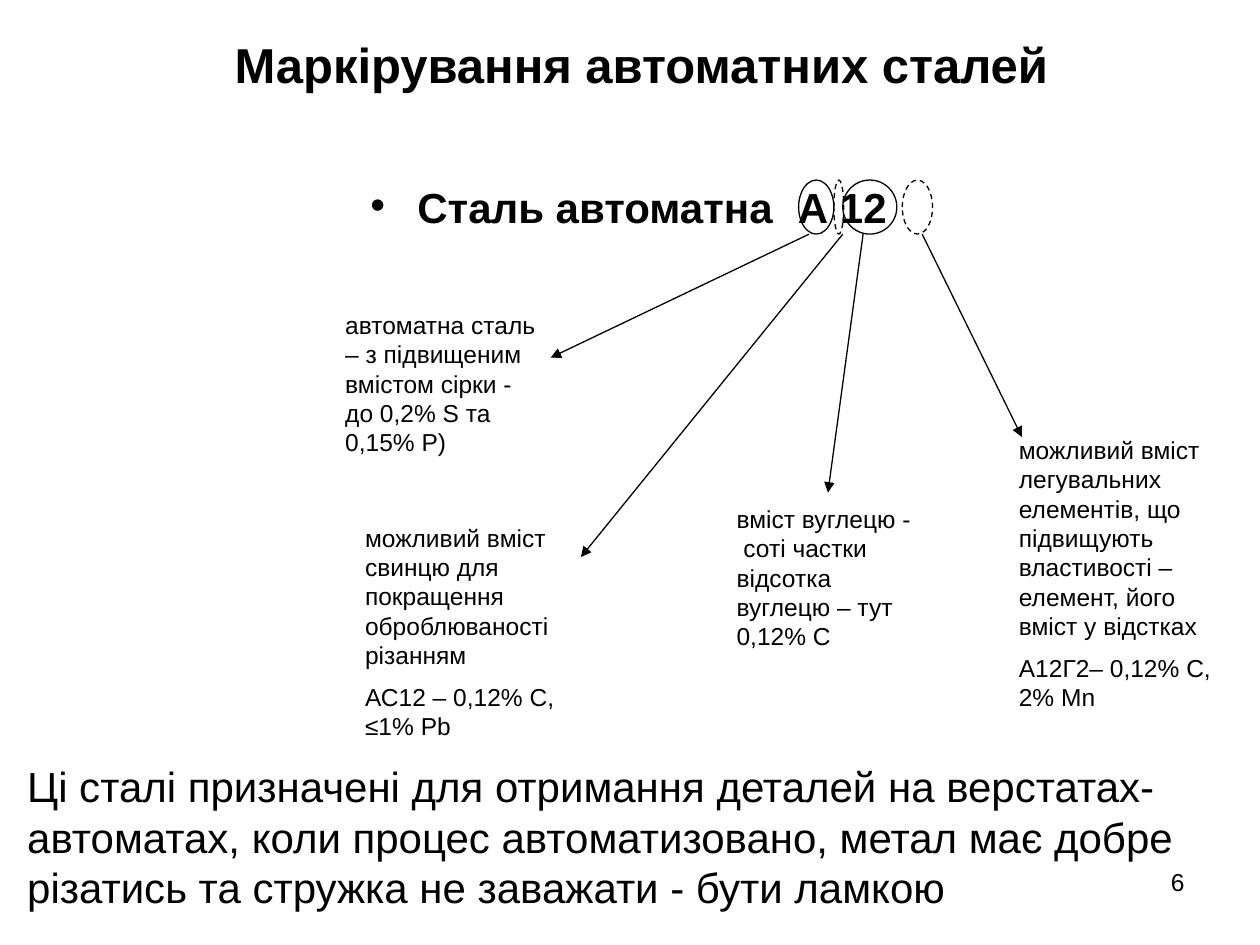
from lxml.etree import SubElement
from pptx import Presentation
from pptx.dml.color import RGBColor
from pptx.enum.dml import MSO_LINE
from pptx.enum.shapes import MSO_CONNECTOR, MSO_SHAPE
from pptx.enum.text import MSO_ANCHOR, MSO_AUTO_SIZE, PP_ALIGN
from pptx.oxml.ns import qn
from pptx.util import Cm, Pt

INK = "000000"
FONT = "Arial"
TITLE = "Маркірування автоматних сталей"
GRADE = [("Сталь автоматна", 24, True), (" ", 28, False), (" А 12", 24, True)]
NOTES = [
    ((6.71, 6.12, 4.5, 3.2), 14,
     ["автоматна сталь – з підвищеним вмістом сірки - до 0,2% S та 0,15% Р)"]),
    ((7.11, 10.41, 4.39, 4.7), 14,
     ["можливий вміст свинцю для покращення оброблюваності різанням",
      "АС12 – 0,12% С, ≤1% Pb"]),
    ((14.6, 10.03, 4.09, 3.2), 14,
     ["вміст вуглецю -  соті частки відсотка вуглецю – тут 0,12% С"]),
    ((20.29, 8.64, 4.39, 6.76), 14,
     ["можливий вміст легувальних елементів, що підвищують властивості – "
      "елемент, його вміст у відстках", "А12Г2– 0,12% С, 2% Mn"]),
    ((0.3, 15.21, 24.61, 3.3), 24,
     ["Ці сталі призначені для отримання деталей на верстатах-автоматах, коли процес "
      "автоматизовано, метал має добре різатись та стружка не заважати - бути ламкою"]),
]
RING_TOP, RING_HEIGHT = 3.63, 1.09
RINGS = [(16.1, 0.71, False), (16.81, 0.2, True), (16.99, 1.09, False), (18.19, 0.61, True)]
ARROWS = [(16.31, 11.1, 7.21), (16.99, 11.71, 11.23), (17.4, 16.69, 9.93), (18.59, 20.6, 8.81)]


def color(value):
    return RGBColor.from_string(value)


def place(shape, left, top, width, height):
    shape.left, shape.top, shape.width, shape.height = map(Cm, (left, top, width, height))


def format_span(span, size, bold=False):
    span.font.name = FONT
    span.font.size = Pt(size)
    span.font.bold = bold
    span.font.color.rgb = color(INK)


def add_text(page, area, size, lines, align=PP_ALIGN.LEFT):
    box = page.shapes.add_textbox(*map(Cm, area))
    frame = box.text_frame
    frame.word_wrap = True
    frame.text = "\n".join(lines)
    for para in frame.paragraphs:
        para.alignment = align
        para.space_before = Pt(size / 2)
        format_span(para.runs[0], size)


def style_line(line, dashed=False):
    line.color.rgb = color(INK)
    line.width = Pt(0.75)
    if dashed:
        line.dash_style = MSO_LINE.DASH


def add_ring(page, left, width, dashed):
    ring = page.shapes.add_shape(
        MSO_SHAPE.OVAL, Cm(left), Cm(RING_TOP), Cm(width), Cm(RING_HEIGHT))
    ring.shadow.inherit = False
    ring.fill.background()
    style_line(ring.line, dashed)


def add_arrow(page, start, end, bottom):
    arrow = page.shapes.add_connector(
        MSO_CONNECTOR.STRAIGHT, Cm(start), Cm(RING_TOP + RING_HEIGHT), Cm(end), Cm(bottom))
    style_line(arrow.line)
    SubElement(arrow.line._get_or_add_ln(), qn("a:tailEnd"), type="triangle")
    SubElement(arrow._element.spPr, qn("a:effectLst"))


def fill_title(title):
    place(title, 1.5, 0.53, 22.86, 1.5)
    frame = title.text_frame
    frame.text = TITLE
    frame.auto_size = MSO_AUTO_SIZE.NONE
    frame.vertical_anchor = MSO_ANCHOR.MIDDLE
    para = frame.paragraphs[0]
    para.alignment = PP_ALIGN.CENTER
    format_span(para.runs[0], 28, True)


def fill_grade(body):
    place(body, 7.21, 3.53, 11.2, 1.17)
    frame = body.text_frame
    frame.auto_size = MSO_AUTO_SIZE.NONE
    para = frame.paragraphs[0]
    para.line_spacing = 0.9
    para.space_before = Pt(5)
    for text, size, bold in GRADE:
        span = para.add_run()
        span.text = text
        format_span(span, size, bold)
    properties = para._p.get_or_add_pPr()
    properties.set("marL", str(Cm(0.95)))
    properties.set("indent", str(Cm(-0.95)))
    SubElement(properties, qn("a:buFont"), typeface=FONT)
    SubElement(properties, qn("a:buChar"), char="•")


def main():
    deck = Presentation()
    deck.slide_width, deck.slide_height = Cm(25.4), Cm(19.05)
    page = deck.slides.add_slide(deck.slide_layouts[1])
    fill_title(page.shapes.title)
    fill_grade(page.placeholders[1])
    for area, size, lines in NOTES:
        add_text(page, area, size, lines)
    for ring in RINGS:
        add_ring(page, *ring)
    for arrow in ARROWS:
        add_arrow(page, *arrow)
    add_text(page, (18.21, 17.35, 5.92, 1.32), 14, ["6"], PP_ALIGN.RIGHT)
    deck.save("out.pptx")


if __name__ == "__main__":
    main()
